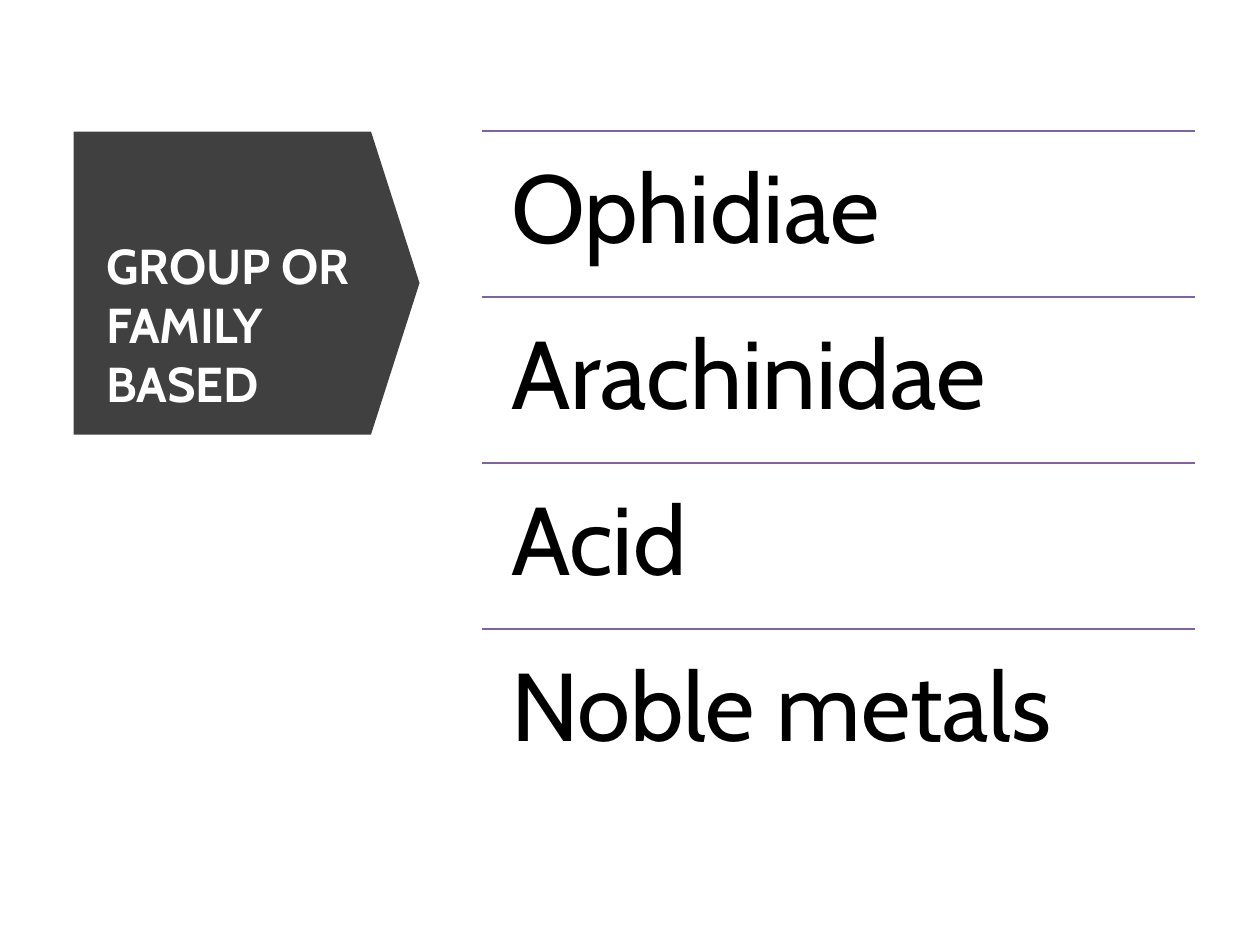
from pptx import Presentation
from pptx.dml.color import RGBColor
from pptx.enum.shapes import MSO_CONNECTOR as CONN, MSO_SHAPE as SHAPE
from pptx.enum.text import MSO_ANCHOR as ANCHOR, MSO_AUTO_SIZE as FIT, PP_ALIGN as ALIGN
from pptx.oxml.ns import qn
from pptx.util import Emu, Pt

FONT = "Cabin"
ITEMS = ["Ophidiae", "Arachinidae", "Acid", "Noble metals"]
LIST_LEFT, LIST_TOP, LIST_WIDTH, LIST_HEIGHT = 482, 131, 713, 665


def px(n):
    return Emu(n * 914400 // 126)


def color(value):
    return RGBColor.from_string(value)


def style_font(p, size, hex_color, bold=False):
    p.font.name = FONT
    p.font.size = Pt(size)
    p.font.bold = bold
    p.font.color.rgb = color(hex_color)
    p.alignment = ALIGN.LEFT


def set_frame(tf, inset_x, inset_y, anchor):
    tf.word_wrap = True
    tf.auto_size = FIT.NONE
    tf.vertical_anchor = anchor
    tf.margin_left = tf.margin_right = px(inset_x)
    tf.margin_top = tf.margin_bottom = px(inset_y)


def add_arrow(s):
    sp = s.shapes.add_shape(SHAPE.DOWN_ARROW, px(95), px(110), px(303), px(346))
    sp.rotation = 270
    sp.adjustments[0] = 1
    sp.adjustments[1] = 0.16
    sp.shadow.inherit = False
    sp.fill.solid()
    sp.fill.fore_color.rgb = color("404040")
    sp.line.fill.background()


def add_title(s, text):
    sp = s.shapes.title
    sp.left, sp.top, sp.width, sp.height = px(100), px(166), px(276), px(246)
    tf = sp.text_frame
    set_frame(tf, 6, 0, ANCHOR.BOTTOM)
    tf.text = text
    style_font(tf.paragraphs[0], 28, "FFFFFF", bold=True)
    s.shapes._spTree.append(sp._element)


def add_rule(s, y):
    line = s.shapes.add_connector(
        CONN.STRAIGHT, px(LIST_LEFT), px(y), px(LIST_LEFT + LIST_WIDTH), px(y))
    line.line.color.rgb = color("8064A2")
    line.line.width = Pt(1)
    line._element.spPr.append(line._element.makeelement(qn("a:effectLst"), {}))


def add_item(s, text, y, height):
    sp = s.shapes.add_textbox(px(LIST_LEFT), px(y), px(LIST_WIDTH), px(height))
    tf = sp.text_frame
    set_frame(tf, 29, 29, ANCHOR.TOP)
    p = tf.paragraphs[0]
    p.text = text
    p.line_spacing = 0.9
    style_font(p, 55, "000000")


def main():
    prs = Presentation()
    prs.slide_width, prs.slide_height = px(1260), px(945)
    s = prs.slides.add_slide(prs.slide_layouts[5])
    add_arrow(s)
    add_title(s, "GROUP OR FAMILY BASED")
    for i, text in enumerate(ITEMS):
        y = LIST_TOP + LIST_HEIGHT * i // len(ITEMS)
        add_rule(s, y)
        add_item(s, text, y, LIST_HEIGHT // len(ITEMS))
    prs.save("out.pptx")


if __name__ == "__main__":
    main()
